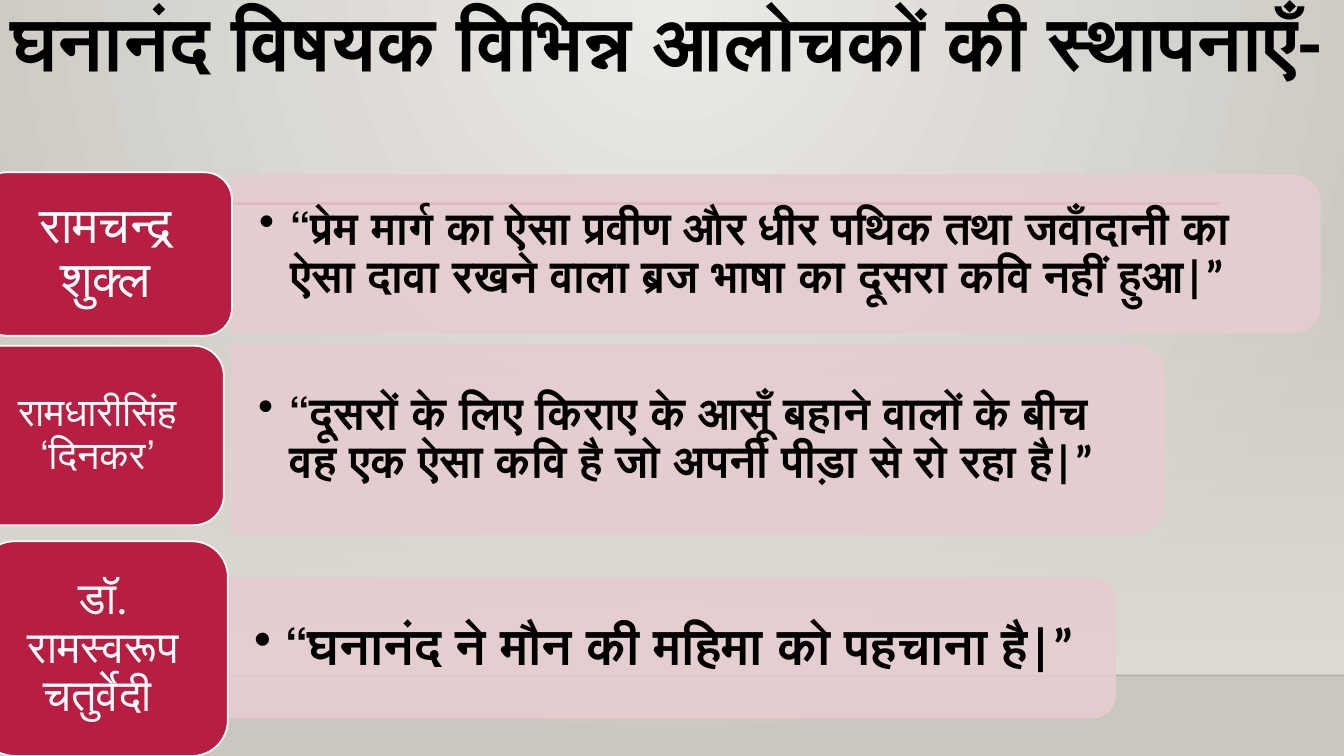
from dataclasses import dataclass

from lxml import etree
from pptx import Presentation
from pptx.dml import color
from pptx.enum import shapes, text
from pptx.oxml import ns
from pptx.util import Inches, Pt

TITLE = "घनानंद विषयक विभिन्न आलोचकों की स्थापनाएँ-"
CRITICS = [
    {
        "name": "रामचन्द्र शुक्ल", "name_size": 36, "name_inset": (0.15, 0.07),
        "label": (-0.21, 1.71, 2.51, 1.62),
        "quote": "“प्रेम मार्ग का ऐसा प्रवीण और धीर पथिक तथा जवाँदानी का ऐसा दावा रखने वाला ब्रज भाषा का दूसरा कवि नहीं हुआ|”",
        "quote_size": 32, "bar": (2.3, 1.74, 10.79, 1.56),
    },
    {
        "name": "रामधारीसिंह ‘दिनकर’", "name_size": 28, "name_inset": (0.12, 0.06),
        "label": (-0.29, 3.43, 2.51, 1.78),
        "quote": "“दूसरों के लिए किराए के आसूँ बहाने वालों के बीच वह एक ऐसा कवि है जो अपनी पीड़ा से रो रहा है|”",
        "quote_size": 32, "bar": (2.29, 3.42, 9.26, 1.87),
    },
    {
        "name": "डॉ. रामस्वरूप चतुर्वेदी ", "name_size": 32, "name_inset": (0.13, 0.07),
        "label": (-0.21, 5.37, 2.47, 2.13),
        "quote": "“घनानंद ने मौन की महिमा को पहचाना है|”",
        "quote_size": 36, "bar": (2.25, 5.74, 8.81, 1.38),
    },
]


@dataclass(frozen=True)
class Theme:
    font: str = "Calibri"
    title_size: int = 54
    ink: str = "000000"
    white: str = "FFFFFF"
    crimson: str = "B71E42"
    pink: str = "E6CDCF"
    floor: str = "DFDBD5"
    floor_line: str = "000001"
    glow: str = "ECEAE7"
    edge: str = "CAC7C1"


THEME = Theme()


def rgb(value):
    return color.RGBColor.from_string(value)


def add_node(parent, tag, **attributes):
    return etree.SubElement(parent, ns.qn(tag), attributes)


def set_alpha(element, percent):
    for node in element.xpath("./p:spPr//a:srgbClr"):
        add_node(node, "a:alpha", val=str(percent * 1000))


def set_stops(gradient, stops):
    for child in list(gradient):
        gradient.remove(child)
    stop_list = add_node(gradient, "a:gsLst")
    for position, value, opacity in stops:
        stop = add_node(stop_list, "a:gs", pos=str(position * 1000))
        tint = add_node(stop, "a:srgbClr", val=value)
        if opacity < 100:
            add_node(tint, "a:alpha", val=str(opacity * 1000))


def paint_background(slide):
    slide.background.fill.gradient()
    gradient = slide.element.xpath(".//p:bgPr/a:gradFill")[0]
    set_stops(gradient, [(0, THEME.glow, 100), (100, THEME.edge, 100)])
    circle = add_node(gradient, "a:path", path="circle")
    add_node(circle, "a:fillToRect", l="43000", t="0", r="43000", b="100000")


def add_floor(slide):
    floor = slide.shapes.add_shape(shapes.MSO_SHAPE.RECTANGLE, 0, Inches(2.21), Inches(13.33), Inches(4.49))
    floor.shadow.inherit = False
    floor.line.fill.background()
    floor.fill.gradient()
    gradient = floor.element.xpath("./p:spPr/a:gradFill")[0]
    set_stops(gradient, [(0, THEME.floor, 0), (100, THEME.floor, 100)])
    add_node(gradient, "a:lin", ang="5400000", scaled="0")


def add_rule(slide, left, right, top, value, width, opacity=100):
    rule = slide.shapes.add_connector(
        shapes.MSO_CONNECTOR.STRAIGHT, Inches(left), Inches(top), Inches(right), Inches(top))
    rule.line.color.rgb = rgb(value)
    rule.line.width = Pt(width)
    if opacity < 100:
        set_alpha(rule.element, opacity)
    add_node(rule.element.spPr, "a:effectLst")


def add_block(slide, kind, box, fill, line):
    shape = slide.shapes.add_shape(kind, *map(Inches, box))
    shape.shadow.inherit = False
    shape.fill.solid()
    shape.fill.fore_color.rgb = rgb(fill)
    shape.line.color.rgb = rgb(line)
    shape.line.width = Pt(1.25)
    return shape


def set_frame(frame, anchor, inset):
    frame.word_wrap = True
    frame.auto_size = text.MSO_AUTO_SIZE.NONE
    frame.vertical_anchor = anchor
    frame.margin_left = frame.margin_right = Inches(inset[0])
    frame.margin_top = frame.margin_bottom = Inches(inset[1])


def write(frame, words, size, value, bold, align):
    paragraph = frame.paragraphs[0]
    paragraph.alignment = align
    paragraph.line_spacing = 0.9
    run = paragraph.add_run()
    run.text = words
    run.font.name = THEME.font
    run.font.size = Pt(size)
    run.font.bold = bold
    run.font.color.rgb = rgb(value)


def add_quote(slide, critic):
    left, top, width, height = critic["bar"]
    upright = (left + (width - height) / 2, top + (height - width) / 2, height, width)
    bar = add_block(slide, shapes.MSO_SHAPE.ROUND_2_SAME_RECTANGLE, upright, THEME.pink, THEME.pink)
    bar.rotation = 90
    set_alpha(bar.element, 90)

    box = (left, top + 0.08, width - 0.07, height - 0.16)
    frame = slide.shapes.add_textbox(*map(Inches, box)).text_frame
    set_frame(frame, text.MSO_ANCHOR.MIDDLE, (0.27, 0.14))
    paragraph = frame.paragraphs[0]
    paragraph.level = 1
    properties = paragraph._p.get_or_add_pPr()
    properties.set("marL", str(Inches(0.31)))
    properties.set("indent", str(Inches(-0.31)))
    add_node(properties, "a:buChar", char="•")
    write(frame, critic["quote"], critic["quote_size"], THEME.ink, True, text.PP_ALIGN.LEFT)


def add_label(slide, critic):
    label = add_block(slide, shapes.MSO_SHAPE.ROUNDED_RECTANGLE, critic["label"], THEME.crimson, THEME.white)
    set_frame(label.text_frame, text.MSO_ANCHOR.MIDDLE, critic["name_inset"])
    write(label.text_frame, critic["name"], critic["name_size"], THEME.white, False, text.PP_ALIGN.CENTER)


def main():
    presentation = Presentation()
    presentation.slide_width = Inches(13.33)
    presentation.slide_height = Inches(7.5)
    slide = presentation.slides.add_slide(presentation.slide_layouts[5])
    paint_background(slide)
    add_floor(slide)
    add_rule(slide, 0, 13.33, 6.7, THEME.floor_line, 1, 20)
    add_rule(slide, 1.59, 12.1, 2.02, THEME.crimson, 2.5)

    title = slide.shapes.title
    title.left, title.top, title.width, title.height = map(Inches, (0, 0, 13.33, 1.58))
    set_frame(title.text_frame, text.MSO_ANCHOR.TOP, (0.1, 0.05))
    write(title.text_frame, TITLE, THEME.title_size, THEME.ink, True, text.PP_ALIGN.LEFT)

    for critic in CRITICS:
        add_quote(slide, critic)
        add_label(slide, critic)
    presentation.save("out.pptx")


if __name__ == "__main__":
    main()
